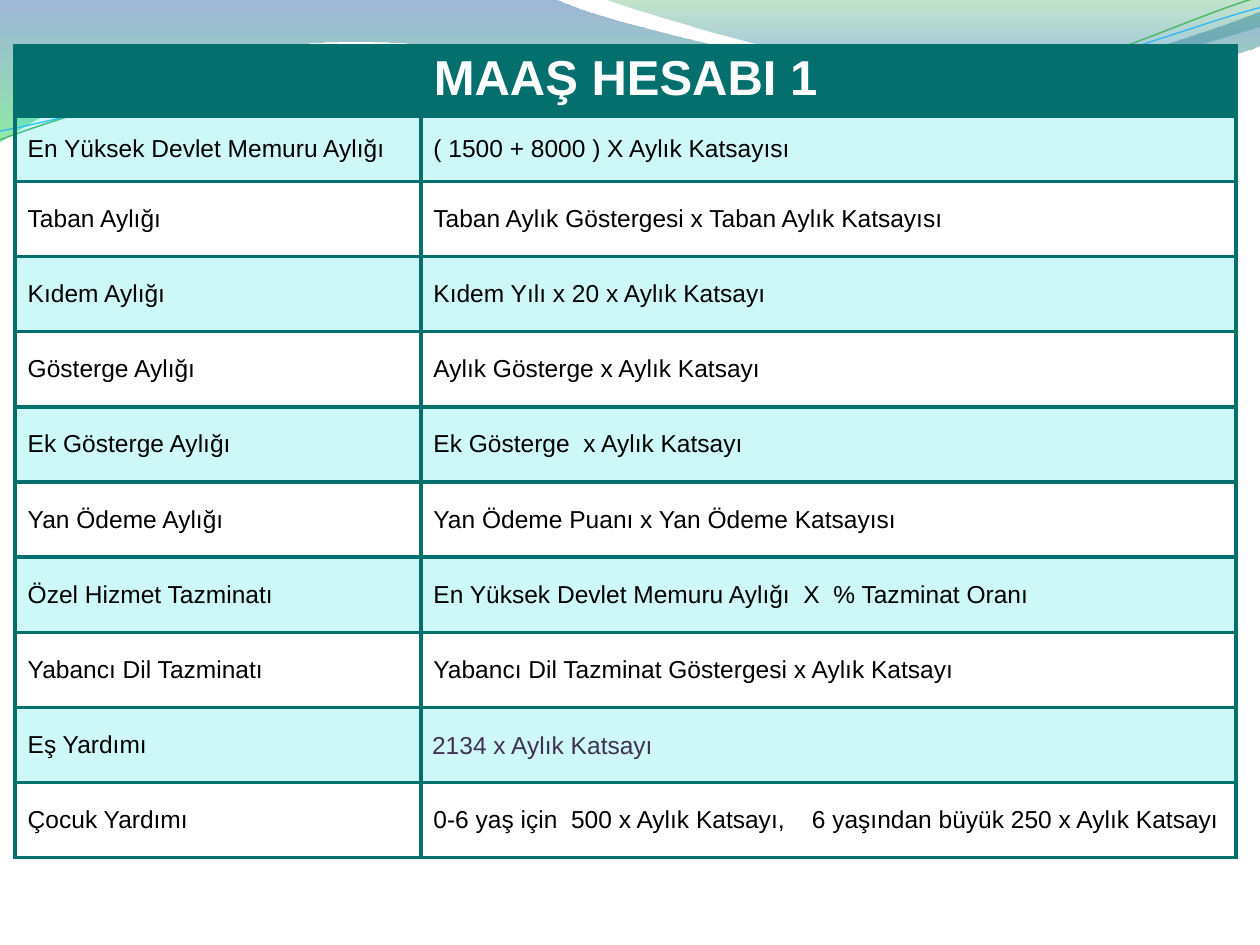
"""Build the salary calculation slide: a two-column table over a wave background."""
import math
from lxml import etree
from pptx import Presentation
from pptx import util as u
from pptx.dml.color import RGBColor
from pptx.enum import text
from pptx.oxml import ns

TEAL = RGBColor(0x03, 0x70, 0x6E)
AQUA = RGBColor(0x05, 0xE0, 0xDB)
WHITE = RGBColor(0xFF, 0xFF, 0xFF)
BLACK = RGBColor(0x00, 0x00, 0x00)
PLUM = RGBColor(0x40, 0x31, 0x51)
DEEP_BLUE = RGBColor(0x29, 0x60, 0xA7)
BRIGHT_GREEN = RGBColor(0x35, 0xDA, 0x5E)
LEAF_GREEN = RGBColor(0x36, 0xA7, 0x52)
MID_BLUE = RGBColor(0x24, 0x72, 0xD3)
LINE_GREEN = RGBColor(0x50, 0xB8, 0x6A)
LINE_BLUE = RGBColor(0x31, 0xB6, 0xFD)
FONT = "Arial"


def add_wave(slide, box, segments, closed, rotation=0):
    """Draw a shape of one-point straight and three-point Bezier segments, in slide inches."""
    left, top, width, height = box
    builder = slide.shapes.build_freeform(u.Inches(left), u.Inches(top))
    builder.add_line_segments([(u.Inches(left + width), u.Inches(top + height))], close=closed)
    shape = builder.convert_to_shape()
    shape.left, shape.top, shape.width, shape.height = (u.Inches(length) for length in box)
    shape.rotation = rotation
    shape.shadow.inherit = False
    path_element = next(shape.element.iter(ns.qn("a:path")))
    for child in list(path_element):
        path_element.remove(child)
    path_element.set("w", str(u.Inches(width)))
    path_element.set("h", str(u.Inches(height)))
    cosine, sine = math.cos(math.radians(rotation)), math.sin(math.radians(rotation))
    for index, segment in enumerate(segments):
        tag = "a:moveTo" if index == 0 else "a:lnTo" if len(segment) == 1 else "a:cubicBezTo"
        command = etree.SubElement(path_element, ns.qn(tag))
        for x, y in segment:
            dx, dy = x - left - width / 2, y - top - height / 2
            local_x = width / 2 + dx * cosine + dy * sine
            local_y = height / 2 - dx * sine + dy * cosine
            etree.SubElement(
                command, ns.qn("a:pt"), x=str(u.Inches(local_x)), y=str(u.Inches(local_y))
            )
    if closed:
        etree.SubElement(path_element, ns.qn("a:close"))
    return shape


def set_opacity(fill_element, percents):
    """Give each colour of a fill its opacity in percent."""
    for color, percent in zip(fill_element.iter(ns.qn("a:srgbClr")), percents):
        etree.SubElement(color, ns.qn("a:alpha")).set("val", str(percent * 1000))


presentation = Presentation()
presentation.slide_width = u.Inches(10)
presentation.slide_height = u.Inches(7.5)
slide = presentation.slides.add_slide(presentation.slide_layouts[6])

filled_waves = [
    ((-0.01, -0.01, 10.02, 1.14), [
        [(0, 0)],
        [(4.4, -0.01)],
        [(4.76, 0.17), (6.64, 0.63), (7.58, 0.63)],
        [(8.53, 0.63), (9.58, 0.26), (10, 0.09)],
        [(10.01, 0.36)],
        [(9.83, 0.44), (8.7, 0.76), (7.46, 0.75)],
        [(6.22, 0.75), (3.82, 0.28), (2.57, 0.34)],
        [(1.29, 0.36), (0.46, 0.83), (-0.01, 1.13)],
        [(0, 0)],
    ], [(0, DEEP_BLUE, 45), (1, BRIGHT_GREEN, 55)]),
    ((4.79, -0.01, 5.21, 0.7), [
        [(4.79, -0.01)],
        [(5.09, 0.11), (6.82, 0.62), (7.69, 0.65)],
        [(8.56, 0.69), (9.61, 0.32), (10, 0.21)],
        [(10, 0)],
        [(4.79, -0.01)],
    ], [(0, LEAF_GREEN, 30), (0.8, MID_BLUE, 45)]),
]
for box, segments, stops in filled_waves:
    shape = add_wave(slide, box, segments, True)
    shape.line.fill.background()
    shape.fill.gradient()
    shape.fill.gradient_angle = 270
    for gradient_stop, (position, color, _) in zip(shape.fill.gradient_stops, stops):
        gradient_stop.position = position
        gradient_stop.color.rgb = color
    set_opacity(shape.element.spPr.find(ns.qn("a:gradFill")), [stop[2] for stop in stops])

wave_lines = [
    ((-0.02, 0.22, 10.02, 0.71), [
        [(0, 1.11)],
        [(0.48, 0.93), (1.58, 0.57), (2.77, 0.52)],
        [(3.95, 0.47), (5.93, 0.89), (7.13, 0.8)],
        [(8.33, 0.71), (9.38, 0.15), (9.98, -0.02)],
    ], LINE_GREEN, 0.85),
    ((-0.02, 0.3, 10.03, 0.58), [
        [(0, 1.04)],
        [(0.47, 0.96), (1.64, 0.61), (2.83, 0.56)],
        [(4.03, 0.51), (5.97, 0.84), (7.17, 0.75)],
        [(8.36, 0.67), (9.41, 0.21), (10, 0.06)],
    ], LINE_BLUE, 0.75),
]
for box, segments, color, width in wave_lines:
    shape = add_wave(slide, box, segments, False, rotation=357.3)
    shape.fill.background()
    shape.line.color.rgb = color
    shape.line.width = u.Pt(width)

rows = [
    ("MAAŞ HESABI 1", ""),
    ("En Yüksek Devlet Memuru Aylığı", "( 1500 + 8000 ) X Aylık Katsayısı"),
    ("Taban Aylığı", "Taban Aylık Göstergesi x Taban Aylık Katsayısı"),
    ("Kıdem Aylığı", "Kıdem Yılı x 20 x Aylık Katsayı"),
    ("Gösterge Aylığı", "Aylık Gösterge x Aylık Katsayı"),
    ("Ek Gösterge Aylığı", "Ek Gösterge  x Aylık Katsayı"),
    ("Yan Ödeme Aylığı", "Yan Ödeme Puanı x Yan Ödeme Katsayısı"),
    ("Özel Hizmet Tazminatı", "En Yüksek Devlet Memuru Aylığı  X  % Tazminat Oranı"),
    ("Yabancı Dil Tazminatı", "Yabancı Dil Tazminat Göstergesi x Aylık Katsayı"),
    ("Eş Yardımı", "2134 x Aylık Katsayı"),
    ("Çocuk Yardımı", "0-6 yaş için  500 x Aylık Katsayı,    6 yaşından büyük 250 x Aylık Katsayı"),
]
equal_rows = len(rows) - 2
row_heights = [0.56, 0.52] + [5.37 / equal_rows] * equal_rows
table = slide.shapes.add_table(
    len(rows), 2, u.Inches(0.12), u.Inches(0.36), u.Inches(9.69), u.Inches(sum(row_heights))
).table
table.horz_banding = False
for column, width in zip(table.columns, (3.22, 6.47)):
    column.width = u.Inches(width)
for row, height in zip(table.rows, row_heights):
    row.height = u.Inches(height)

for row_index, labels in enumerate(rows):
    is_header = row_index == 0
    for column_index, label in enumerate(labels):
        cell = table.cell(row_index, column_index)
        properties = cell._tc.get_or_add_tcPr()
        for side in ("a:lnL", "a:lnR", "a:lnT", "a:lnB"):
            border = etree.SubElement(properties, ns.qn(side), w=str(u.Pt(2.25)))
            border_fill = etree.SubElement(border, ns.qn("a:solidFill"))
            etree.SubElement(border_fill, ns.qn("a:srgbClr"), val=str(TEAL))
        if is_header:
            cell.fill.solid()
            cell.fill.fore_color.rgb = TEAL
        elif row_index % 2:
            cell.fill.solid()
            cell.fill.fore_color.rgb = AQUA
            set_opacity(properties.find(ns.qn("a:solidFill")), [20])
        else:
            cell.fill.background()
        cell.vertical_anchor = text.MSO_ANCHOR.TOP if is_header else text.MSO_ANCHOR.MIDDLE
        cell.text_frame.text = label
        paragraph = cell.text_frame.paragraphs[0]
        paragraph.alignment = text.PP_ALIGN.CENTER if is_header else text.PP_ALIGN.LEFT
        for run in paragraph.runs:
            run.font.name = FONT
            run.font.size = u.Pt(28 if is_header else 14)
            run.font.bold = is_header
            run.font.color.rgb = WHITE if is_header else BLACK

table.cell(0, 0).merge(table.cell(0, 1))
spouse_cell = table.cell(9, 1)
spouse_cell.margin_left = u.Inches(0.09)
spouse_cell.margin_top = spouse_cell.margin_right = u.Inches(0.01)
spouse_cell.margin_bottom = 0
spouse_cell.text_frame.paragraphs[0].runs[0].font.color.rgb = PLUM

presentation.save("out.pptx")
